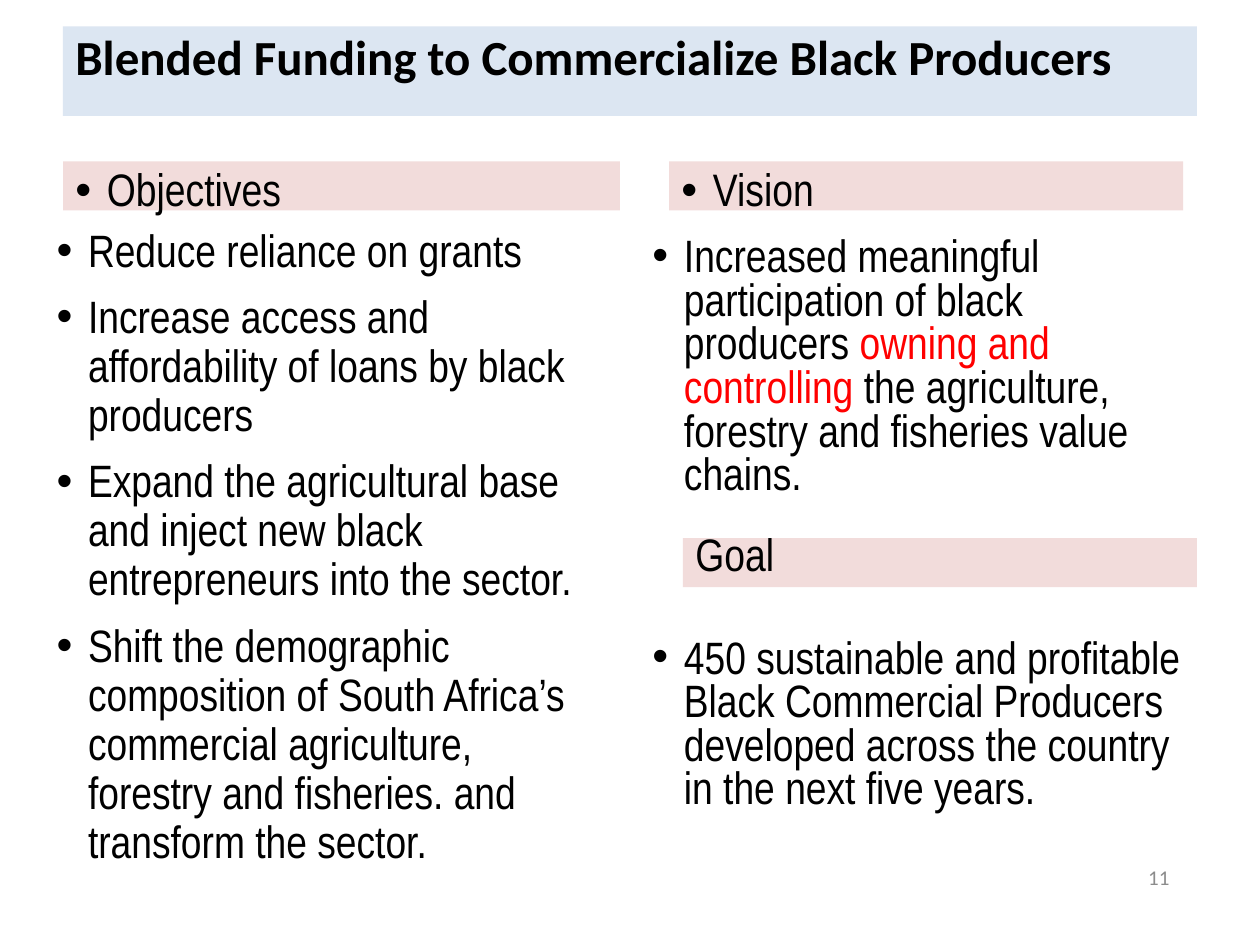
"""Build the slide on blended funding for black producers."""
from lxml import etree
from pptx import Presentation
from pptx.dml.color import RGBColor
from pptx.enum.shapes import MSO_SHAPE
from pptx.enum.text import MSO_ANCHOR, PP_ALIGN
from pptx.oxml.ns import qn
from pptx.util import Inches, Pt

RECT = MSO_SHAPE.RECTANGLE
TOP, MID, LOW = MSO_ANCHOR.TOP, MSO_ANCHOR.MIDDLE, MSO_ANCHOR.BOTTOM
LEFT, RIGHT = PP_ALIGN.LEFT, PP_ALIGN.RIGHT
BLACK, RED, GREY = "000000", "FF0000", "8C8C8C"
BLUE, PINK = "DCE6F2", "F2DCDB"
SANS, NARROW = "Calibri", "Arial Narrow"


def color(code):
    """Turn a hex string into a colour."""
    return RGBColor.from_string(code)


def write(box, paras, size=25.9, font=NARROW, bold=False, bullet=True,
          line=0.9, gaps=(10,), side=LEFT, anchor=TOP):
    """Fill a box with paragraphs, each a list of text and colour pairs."""
    frame = box.text_frame
    frame.word_wrap = True
    frame.vertical_anchor = anchor
    for i, runs in enumerate(paras):
        para = frame.add_paragraph() if i else frame.paragraphs[0]
        para.alignment = side
        para.line_spacing = line
        para.space_before = Pt(gaps[min(i, len(gaps) - 1)])
        if bullet:
            props = para._p.get_or_add_pPr()
            props.set("marL", str(Inches(0.25)))
            props.set("indent", str(-Inches(0.25)))
            etree.SubElement(props, qn("a:buFont"), typeface="Arial")
            etree.SubElement(props, qn("a:buChar"), char="•")
        for text, code in runs:
            run = para.add_run()
            run.text = text
            run.font.size = Pt(size)
            run.font.name = font
            run.font.bold = bold
            run.font.color.rgb = color(code)


deck = Presentation()
deck.slide_width, deck.slide_height = Inches(10), Inches(7.5)
shapes = deck.slides.add_slide(deck.slide_layouts[6]).shapes

goals = [
    "Reduce reliance on grants",
    "Increase access and affordability of loans by black producers",
    "Expand the agricultural base and inject new black entrepreneurs "
    "into the sector.",
    "Shift the demographic composition of South Africa’s commercial "
    "agriculture, forestry and fisheries. and transform the sector.",
]
box = shapes.add_textbox(Inches(0.35), Inches(1.76), Inches(4.42), Inches(5.2))
write(box, [[(text, BLACK)] for text in goals])

vision = [
    [("Increased meaningful participation of black producers ", BLACK),
     ("owning and controlling ", RED),
     ("the agriculture, forestry and fisheries value chains.", BLACK)],
    [("450 sustainable and profitable Black Commercial Producers developed "
      "across the country in the next five years.", BLACK)],
]
box = shapes.add_textbox(Inches(5.08), Inches(1.84), Inches(4.42), Inches(5.12))
write(box, vision, line=0.8, gaps=(10, 80))

title = dict(size=28, font=SANS, bold=True, bullet=False, gaps=(0,))
goal = dict(size=26, bullet=False, line=1.0, gaps=(5,), anchor=LOW)
bars = [
    ("Blended Funding to Commercialize Black Producers",
     0.5, 0.21, 9, 0.71, BLUE, title),
    ("Vision", 5.31, 1.28, 4.08, 0.39, PINK, dict(size=26)),
    ("Goal", 5.42, 4.27, 4.08, 0.39, PINK, goal),
    ("Objectives", 0.5, 1.28, 4.42, 0.39, PINK, dict(size=26)),
]
for text, x, y, wide, high, fill, style in bars:
    bar = shapes.add_shape(RECT, Inches(x), Inches(y), Inches(wide), Inches(high))
    bar.shadow.inherit = False
    bar.fill.solid()
    bar.fill.fore_color.rgb = color(fill)
    bar.line.fill.background()
    write(bar, [[(text, BLACK)]], **style)

box = shapes.add_textbox(Inches(7.05), Inches(6.76), Inches(2.33), Inches(0.4))
write(box, [[("11", GREY)]], size=12, font=SANS, bullet=False, line=1.0,
      gaps=(0,), side=RIGHT, anchor=MID)

deck.save("out.pptx")
